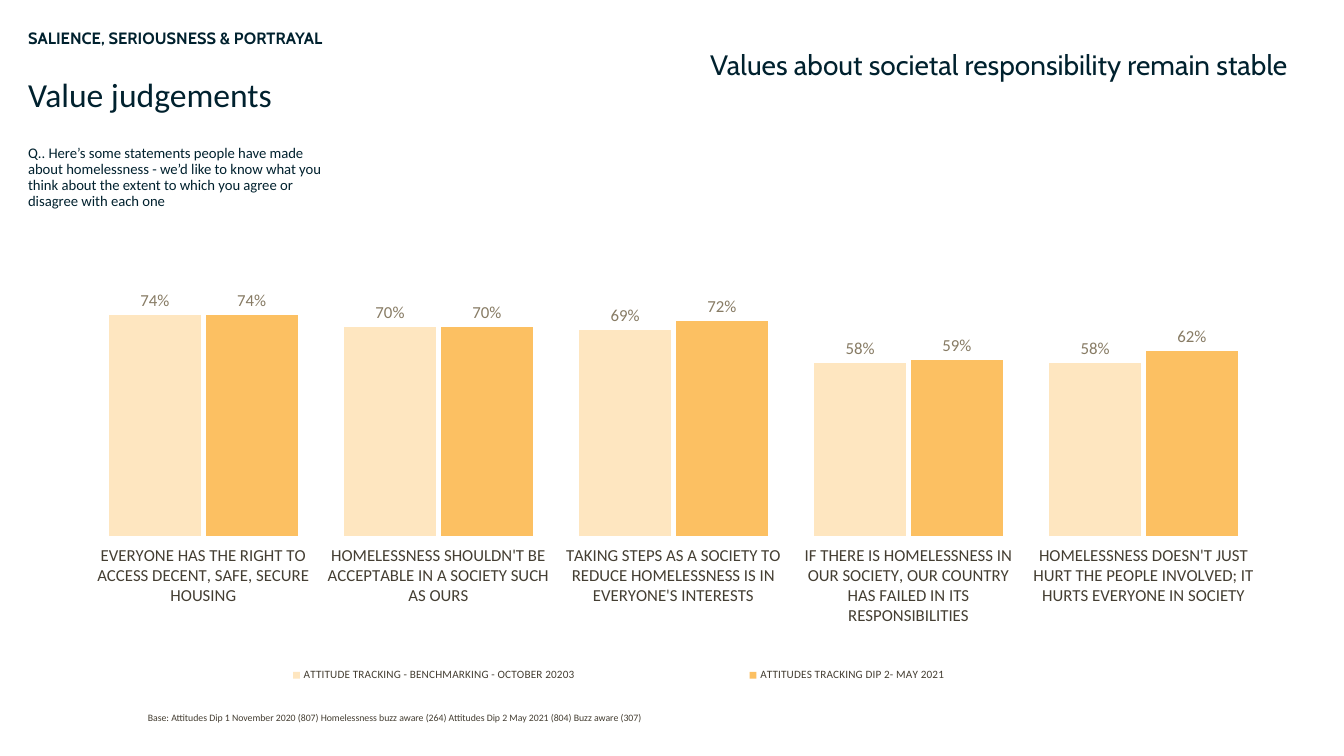
from lxml import etree
from pptx import Presentation
from pptx import util as u
from pptx.chart.data import CategoryChartData
from pptx.dml.color import RGBColor
from pptx.enum import chart as ch, text
from pptx.oxml.ns import qn

COLORS = {
    "navy": "00212E",
    "brown": "443E32",
    "taupe": "877B64",
    "cream": "FEE6C0",
    "amber": "FCC062",
}
STATEMENTS = [
    "EVERYONE HAS THE RIGHT TO ACCESS DECENT, SAFE, SECURE HOUSING",
    "HOMELESSNESS SHOULDN'T BE ACCEPTABLE IN A SOCIETY SUCH AS OURS",
    "TAKING STEPS AS A SOCIETY TO REDUCE HOMELESSNESS IS IN EVERYONE'S INTERESTS",
    "IF THERE IS HOMELESSNESS IN OUR SOCIETY, OUR COUNTRY HAS FAILED IN ITS RESPONSIBILITIES",
    "HOMELESSNESS DOESN'T JUST HURT THE PEOPLE INVOLVED; IT HURTS EVERYONE IN SOCIETY",
]
WAVES = [
    ("ATTITUDE TRACKING - BENCHMARKING - OCTOBER 20203", "cream", [0.74, 0.7, 0.69, 0.58, 0.58]),
    ("ATTITUDES TRACKING DIP 2- MAY 2021", "amber", [0.74, 0.7, 0.72, 0.59, 0.62]),
]


def set_font(font, size, color, name="Calibri", bold=False):
    font.size, font.name, font.bold = u.Pt(size), name, bold
    font.color.rgb = RGBColor.from_string(COLORS[color])


def manual_layout(box, inner=False):
    """Return a c:layout element for (x, y, w, h) as fractions of the chart."""
    layout = etree.Element(qn("c:layout"))
    manual = etree.SubElement(layout, qn("c:manualLayout"))
    settings = [("layoutTarget", "inner")] if inner else []
    settings += [("xMode", "edge"), ("yMode", "edge"), *zip("xywh", box)]
    for tag, value in settings:
        etree.SubElement(manual, qn("c:" + tag)).set("val", str(value))
    return layout


class SurveySlide:
    def __init__(self, prs):
        self.slide = prs.slides.add_slide(prs.slide_layouts[6])

    def add_text(self, words, box, size, color="navy", font="Calibri", bold=False,
                 align=text.PP_ALIGN.LEFT, anchor=text.MSO_ANCHOR.TOP):
        frame = self.slide.shapes.add_textbox(*map(u.Pt, box)).text_frame
        frame.word_wrap = True
        frame.vertical_anchor = anchor
        line = frame.paragraphs[0]
        line.alignment, line.line_spacing = align, 0.9
        run = line.add_run()
        run.text = words
        set_font(run.font, size, color, font, bold)

    def column_chart(self, categories, series, box, plot_box, legend_box):
        data = CategoryChartData(number_format="0%")
        data.categories = categories
        for name, _, values in series:
            data.add_series(name, values)
        chart = self.slide.shapes.add_chart(
            ch.XL_CHART_TYPE.COLUMN_CLUSTERED, *map(u.Pt, box), data).chart
        set_font(chart.font, 10, "navy", "Cabin")
        chart.has_title = False
        self.style_columns(chart.plots[0], series)
        self.style_axes(chart)

        plot_area = chart.plots[0]._element.getparent()
        for old in plot_area.findall(qn("c:layout")):
            plot_area.remove(old)
        plot_area.insert(0, manual_layout(plot_box, inner=True))

        chart.has_legend = True
        legend = chart.legend
        legend.position = ch.XL_LEGEND_POSITION.BOTTOM
        legend.include_in_layout = False
        set_font(legend.font, 8, "brown")
        for old in legend._element.findall(qn("c:layout")):
            legend._element.remove(old)
        legend._element.find(qn("c:legendPos")).addnext(manual_layout(legend_box))

    def style_columns(self, plot, series):
        plot.gap_width, plot.overlap, plot.vary_by_categories = 50, -5, False
        for columns, (_, color, _) in zip(plot.series, series):
            columns.format.fill.solid()
            columns.format.fill.fore_color.rgb = RGBColor.from_string(COLORS[color])
            labels = columns.data_labels
            labels.show_value = True
            labels.position = ch.XL_LABEL_POSITION.OUTSIDE_END
            labels.number_format, labels.number_format_is_linked = "0%", False
            set_font(labels.font, 12, "taupe")

    def style_axes(self, chart):
        statements, share = chart.category_axis, chart.value_axis
        statements.format.line.fill.background()
        statements.major_tick_mark = ch.XL_TICK_MARK.OUTSIDE
        set_font(statements.tick_labels.font, 12, "brown")
        share.minimum_scale, share.maximum_scale, share.major_unit = 0, 1, 0.3
        share.has_major_gridlines = False
        share.visible = False


def main():
    prs = Presentation()
    prs.slide_width, prs.slide_height = u.Pt(960), u.Pt(540)
    page = SurveySlide(prs)
    middle = text.MSO_ANCHOR.MIDDLE
    page.add_text("SALIENCE, SERIOUSNESS & PORTRAYAL", (13, 18, 238, 30), 11.7,
                  font="Cabin", bold=True)
    page.add_text("Value judgements", (13, 52.5, 311, 68), 24)
    page.add_text("Base: Attitudes Dip 1 November 2020 (807) Homelessness buzz aware (264) "
                  "Attitudes Dip 2 May 2021 (804) Buzz aware (307)",
                  (98.5, 502, 430, 22), 7, "brown", anchor=middle)
    page.add_text("Q.. Here’s some statements people have made about homelessness - we’d like "
                  "to know what you think about the extent to which you agree or disagree "
                  "with each one", (13, 100, 238, 54), 10.5, anchor=middle)
    page.add_text("Values about societal responsibility remain stable", (334, 33, 593, 58), 20,
                  font="Cabin", align=text.PP_ALIGN.RIGHT)
    page.column_chart(STATEMENTS, WAVES, (44, 156, 865.5, 343.5),
                      plot_box=(0.02, 0.04, 0.97, 0.62),
                      legend_box=(0.05, 0.92, 0.82, 0.06))
    prs.save("out.pptx")


if __name__ == "__main__":
    main()
